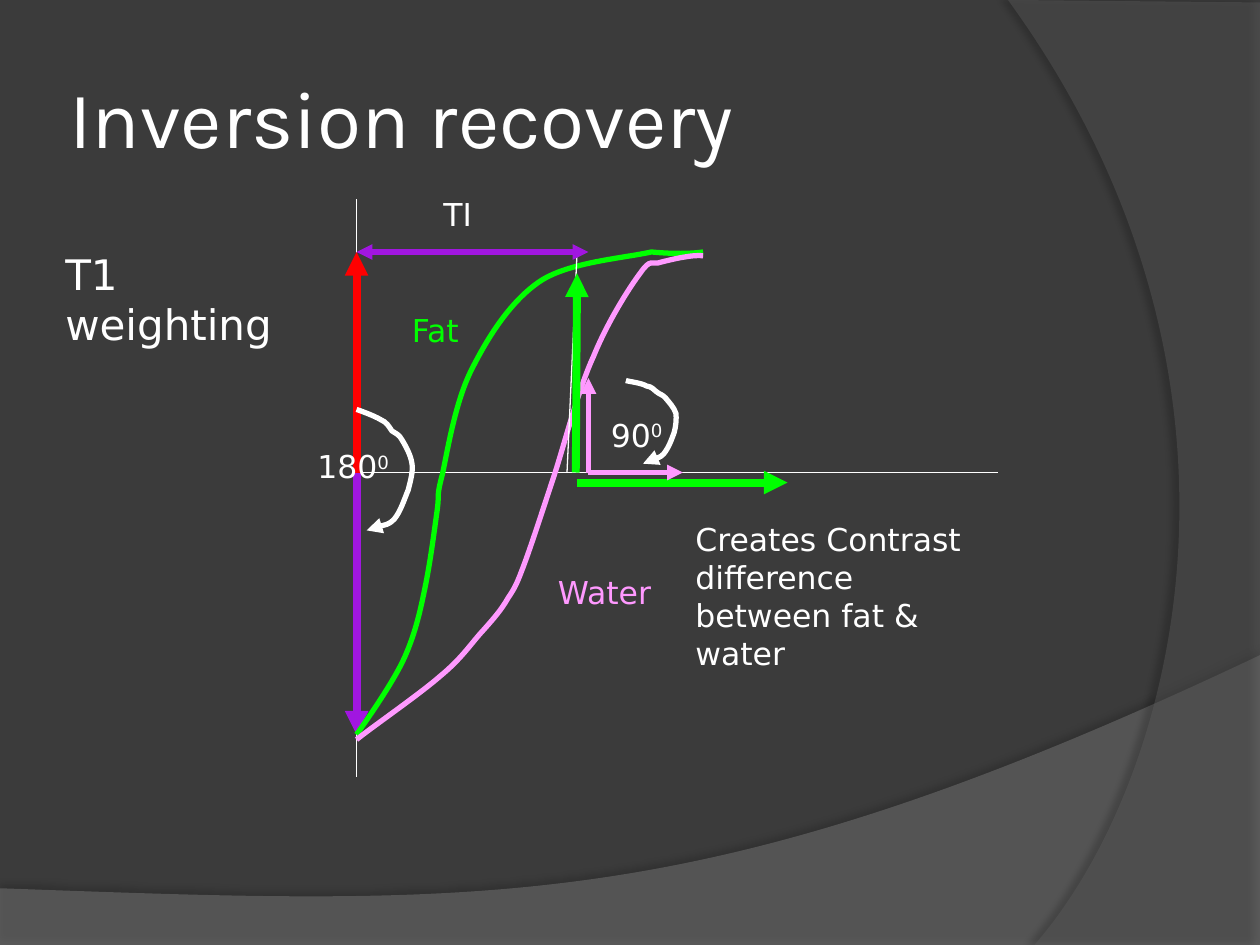
from dataclasses import dataclass

from lxml import etree
from pptx import Presentation
from pptx.dml.color import RGBColor
from pptx.enum.shapes import MSO_CONNECTOR
from pptx.enum.text import MSO_ANCHOR, MSO_AUTO_SIZE, PP_ALIGN
from pptx.oxml.ns import qn
from pptx.util import Inches, Pt

STRAIGHT = MSO_CONNECTOR.STRAIGHT
MIDDLE = MSO_ANCHOR.MIDDLE
GROW = MSO_AUTO_SIZE.SHAPE_TO_FIT_TEXT
LEFT = PP_ALIGN.LEFT

BACKGROUND = RGBColor(0x3B, 0x3B, 0x3B)
LOWER_GREY = RGBColor(0x7F, 0x7F, 0x7F)
RIGHT_GREY = RGBColor(0x5E, 0x5E, 0x5E)
WHITE = RGBColor(0xFF, 0xFF, 0xFF)
RED = RGBColor(0xFF, 0x00, 0x00)
PURPLE = RGBColor(0xA1, 0x16, 0xE0)
GREEN = RGBColor(0x00, 0xFF, 0x00)
PINK = RGBColor(0xFF, 0x99, 0xFF)

TITLE_FONT = "Karla"
LABEL_FONT = "DejaVu Sans"
THIN, MEDIUM, THICK = 0.75, 3, 4.5

Point = tuple[float, float]


@dataclass
class Wave:
    """Backdrop area; a 2-number step is a line, a 6-number step a Bezier."""
    start: Point
    steps: list[tuple[float, ...]]
    color: RGBColor
    opacity: int
    shadow_opacity: int
    shadow_distance: float
    shadow_angle: int


@dataclass
class Curve:
    start: Point
    steps: list[tuple[float, ...]]
    color: RGBColor = WHITE
    heads: tuple[str, ...] = ()
    rotation: float = 0


@dataclass
class Line:
    start: Point
    end: Point
    color: RGBColor = WHITE
    width: float = THIN
    heads: tuple[str, ...] = ()


@dataclass
class Label:
    text: str
    left: float
    top: float
    width: float
    height: float = 0.4
    color: RGBColor = WHITE
    size: int = 18
    superscript: str = ""


WAVES = [
    Wave((0, 7.05), [(0, 7.5), (10, 7.5), (10, 5.2), (5.59, 7.29, 3.91, 7.19, 0, 7.05)],
         LOWER_GREY, 45, 35, 3.5, 270),
    Wave((10, 0.02), [(10, 7.5), (8.21, 7.5), (9.35, 6.19, 10.18, 3, 8, 0)],
         RIGHT_GREY, 40, 45, 4, 180),
]

FAT_RECOVERY = Curve((2.83, 5.83), [
    (2.9, 5.73, 3.12, 5.42, 3.21, 5.22), (3.3, 5.02, 3.34, 4.83, 3.38, 4.63),
    (3.42, 4.43, 3.45, 4.19, 3.47, 4.05), (3.49, 3.9, 3.46, 3.96, 3.51, 3.77),
    (3.55, 3.59, 3.61, 3.2, 3.74, 2.94), (3.87, 2.68, 4.05, 2.39, 4.29, 2.23),
    (4.52, 2.08, 4.95, 2.05, 5.17, 2), (5.37, 2.02, 5.52, 2.01, 5.58, 2)], GREEN)
WATER_RECOVERY = Curve((2.83, 5.87), [
    (2.94, 5.78, 3.33, 5.51, 3.49, 5.37), (3.66, 5.23, 3.73, 5.12, 3.82, 5.02),
    (3.91, 4.92, 3.98, 4.84, 4.03, 4.75), (4.09, 4.66, 4.1, 4.64, 4.16, 4.48),
    (4.22, 4.32, 4.31, 4.04, 4.4, 3.77), (4.49, 3.49, 4.59, 3.09, 4.71, 2.83),
    (4.82, 2.56, 4.99, 2.29, 5.08, 2.17), (5.17, 2.04, 5.17, 2.11, 5.25, 2.08),
    (5.33, 2.06, 5.49, 2.02, 5.58, 2.03)], PINK)
PULSE_180 = Curve((2.83, 3.25), [
    (2.86, 3.26, 2.97, 3.3, 3.02, 3.33), (3.07, 3.35, 3.09, 3.39, 3.11, 3.42),
    (3.14, 3.44, 3.17, 3.45, 3.19, 3.49), (3.22, 3.54, 3.26, 3.61, 3.27, 3.68),
    (3.28, 3.74, 3.26, 3.81, 3.24, 3.89), (3.21, 3.96, 3.18, 4.06, 3.13, 4.12),
    (3.08, 4.17, 2.96, 4.19, 2.91, 4.21)], heads=("tailEnd",))
PULSE_90 = Curve((5, 3), [
    (5.02, 3.01, 5.12, 3.03, 5.16, 3.06), (5.2, 3.07, 5.21, 3.09, 5.23, 3.11),
    (5.26, 3.14, 5.28, 3.14, 5.3, 3.17), (5.32, 3.2, 5.36, 3.25, 5.37, 3.3),
    (5.37, 3.34, 5.36, 3.4, 5.34, 3.45), (5.32, 3.49, 5.29, 3.56, 5.24, 3.61),
    (5.2, 3.64, 5.11, 3.65, 5.07, 3.67)], heads=("tailEnd",), rotation=354.3)

# Diagram parts from back to front
DIAGRAM = [
    Line((2.83, 1.58), (2.83, 6.17)),
    Line((2.83, 3.75), (7.92, 3.75)),
    Line((2.83, 3.75), (2.83, 2), RED, THICK, ("tailEnd",)),
    Line((2.83, 3.75), (2.83, 5.83), PURPLE, THICK, ("tailEnd",)),
    FAT_RECOVERY,
    WATER_RECOVERY,
    PULSE_180,
    Label("180", 2.42, 3.5, 0.83, superscript="0"),
    Line((4.58, 2), (4.5, 3.75)),
    Line((2.83, 2), (4.67, 2), PURPLE, MEDIUM, ("headEnd", "tailEnd")),
    Label("TI", 3.42, 1.5, 0.75),
    Line((4.67, 3.75), (4.67, 3), PINK, MEDIUM, ("tailEnd",)),
    Line((4.57, 3.75), (4.58, 2.17), GREEN, THICK, ("tailEnd",)),
    Label("Fat", 3.17, 2.42, 0.75, color=GREEN),
    Label("Water", 4.33, 4.5, 1.25, color=PINK),
    PULSE_90,
    Label("90", 4.75, 3.25, 0.75, superscript="0"),
    Line((4.58, 3.83), (6.25, 3.83), GREEN, THICK, ("tailEnd",)),
    Line((4.67, 3.75), (5.42, 3.75), PINK, MEDIUM, ("tailEnd",)),
    Label("T1 weighting", 0.42, 1.92, 2.25, 0.9, size=24),
    Label("Creates Contrast difference between fat & water", 5.42, 4.08, 2.58, 1.31),
]


def add_outline(slide, outline: Wave | Curve, close: bool):
    """Build the freeform through its anchors, then bend the curved steps."""
    anchors = [(Inches(x), Inches(y))
               for x, y in [outline.start, *(step[-2:] for step in outline.steps)]]
    builder = slide.shapes.build_freeform(*anchors[0], scale=1.0)
    builder.add_line_segments(anchors[1:], close=close)
    shape = builder.convert_to_shape()
    segments = list(shape._element.iter(qn("a:lnTo")))
    for segment, step in zip(segments, outline.steps):
        if len(step) == 6:
            bend = etree.Element(qn("a:cubicBezTo"))
            for x, y in zip(step[::2], step[1::2]):
                etree.SubElement(bend, qn("a:pt"), x=str(Inches(x) - shape.left),
                                 y=str(Inches(y) - shape.top))
            segment.getparent().replace(segment, bend)
    shape.shadow.inherit = False
    return shape


def style_line(line, color: RGBColor, width: float, heads: tuple[str, ...]) -> None:
    line.color.rgb = color
    line.width = Pt(width)
    for head in heads:
        etree.SubElement(line._get_or_add_ln(), qn(f"a:{head}"), type="triangle")


def add_wave(slide, wave: Wave):
    shape = add_outline(slide, wave, close=True)
    shape.fill.solid()
    shape.fill.fore_color.rgb = wave.color
    shape.line.fill.background()
    properties = shape._element.spPr
    fill_color = properties.find(qn("a:solidFill"))[0]
    etree.SubElement(fill_color, qn("a:alpha"), val=str(wave.opacity * 1000))
    shadow = etree.SubElement(
        properties.find(qn("a:effectLst")), qn("a:outerShdw"), blurRad=str(Pt(4)),
        dist=str(Pt(wave.shadow_distance)), dir=str(wave.shadow_angle * 60000))
    black = etree.SubElement(shadow, qn("a:srgbClr"), val="000000")
    etree.SubElement(black, qn("a:alpha"), val=str(wave.shadow_opacity * 1000))
    return shape


def add_curve(slide, curve: Curve) -> None:
    shape = add_outline(slide, curve, close=False)
    shape.rotation = curve.rotation
    shape.fill.background()
    style_line(shape.line, curve.color, MEDIUM, curve.heads)


def add_line(slide, line: Line) -> None:
    ends = [Inches(value) for value in (*line.start, *line.end)]
    connector = slide.shapes.add_connector(STRAIGHT, *ends)
    style_line(connector.line, line.color, line.width, line.heads)
    etree.SubElement(connector._element.spPr, qn("a:effectLst"))


def style_font(font, name: str, size: int, color: RGBColor) -> None:
    font.name, font.size = name, Pt(size)
    font.color.rgb = color


def add_label(slide, label: Label) -> None:
    box = slide.shapes.add_textbox(Inches(label.left), Inches(label.top),
                                   Inches(label.width), Inches(label.height))
    frame = box.text_frame
    frame.word_wrap = True
    frame.auto_size = GROW
    frame.text = label.text
    paragraph = frame.paragraphs[0]
    if label.superscript:
        raised = paragraph.add_run()
        raised.text = label.superscript
        raised._r.get_or_add_rPr().set("baseline", "30000")
    for run in paragraph.runs:
        style_font(run.font, LABEL_FONT, label.size, label.color)


def add_title(slide, text: str) -> None:
    title = slide.shapes.title
    title.left, title.top = Inches(0.5), Inches(0.3)
    title.width, title.height = Inches(8.17), Inches(1.25)
    frame = title.text_frame
    frame.text = text
    frame.vertical_anchor = MIDDLE
    frame.margin_left = frame.margin_right = Inches(0.05)
    frame.paragraphs[0].alignment = LEFT
    style_font(frame.paragraphs[0].runs[0].font, TITLE_FONT, 46, WHITE)


def main() -> None:
    deck = Presentation()
    deck.slide_width, deck.slide_height = Inches(10), Inches(7.5)
    slide = deck.slides.add_slide(deck.slide_layouts[5])
    slide.background.fill.solid()
    slide.background.fill.fore_color.rgb = BACKGROUND

    # The backdrop belongs to the slide master
    for wave in WAVES:
        deck.slide_master.shapes._spTree.append(add_wave(slide, wave)._element)

    add_title(slide, "Inversion recovery")
    draw = {Line: add_line, Curve: add_curve, Label: add_label}
    for part in DIAGRAM:
        draw[type(part)](slide, part)

    deck.save("out.pptx")


if __name__ == "__main__":
    main()
